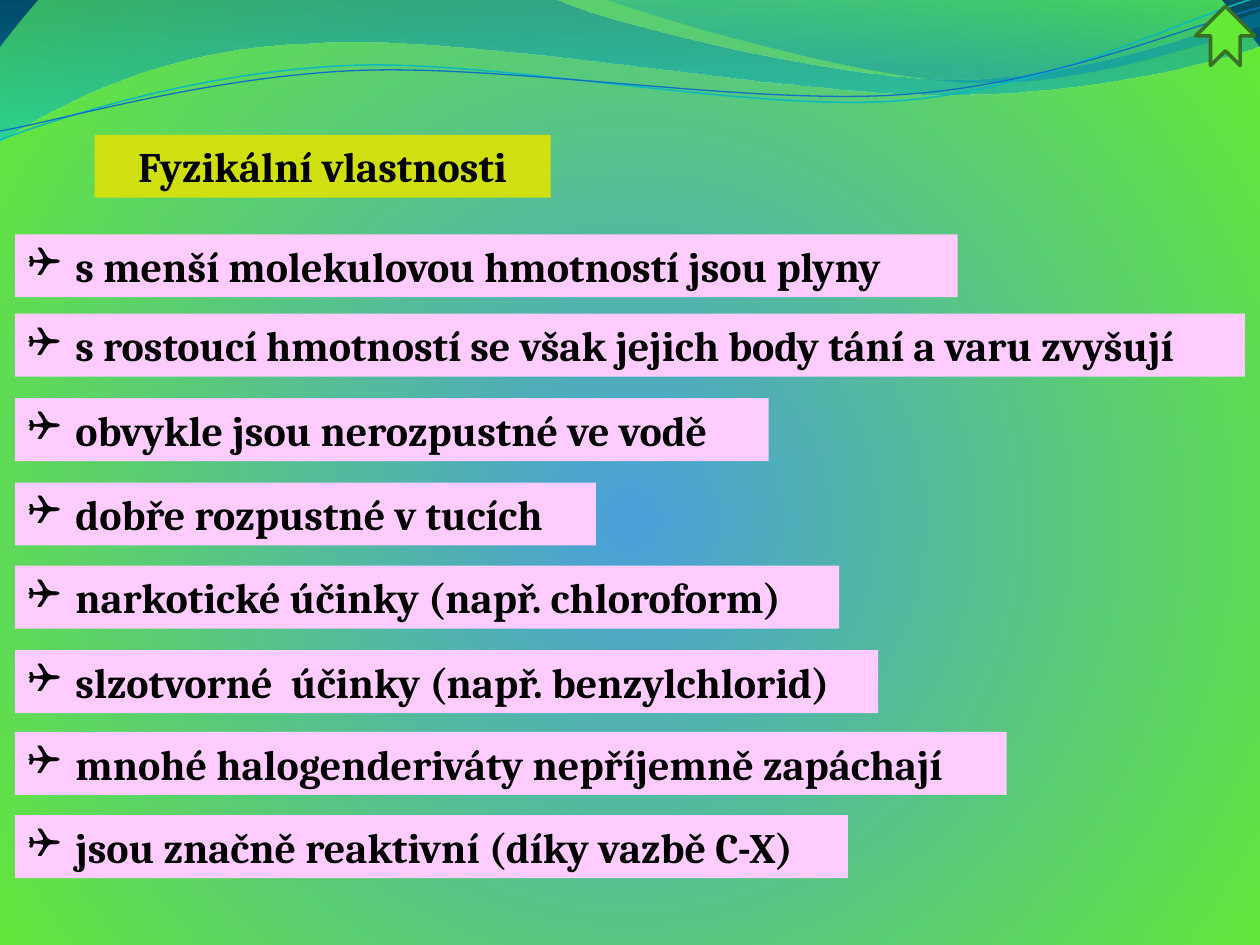
from math import cos, radians, sin

from lxml import etree
from pptx import Presentation
from pptx.dml.color import RGBColor
from pptx.enum.shapes import MSO_SHAPE
from pptx.enum.text import MSO_ANCHOR, MSO_AUTO_SIZE, PP_ALIGN
from pptx.oxml.ns import qn
from pptx.util import Inches, Pt

RECTANGLE = MSO_SHAPE.RECTANGLE
NOTCHED_ARROW = MSO_SHAPE.NOTCHED_RIGHT_ARROW
LEFT, CENTER = PP_ALIGN.LEFT, PP_ALIGN.CENTER
LINE_ROTATION = 357.3

TEXT_FORMAT = {"name": "Cambria", "size": Pt(24), "bold": True}
FRAME_FORMAT = {"word_wrap": True, "auto_size": MSO_AUTO_SIZE.SHAPE_TO_FIT_TEXT,
                "vertical_anchor": MSO_ANCHOR.TOP}

# Each statement: text, top, width
STATEMENTS = [
    ("s menší molekulovou hmotností jsou plyny", 1.86, 7.48),
    ("s rostoucí hmotností se však jejich body tání a varu zvyšují", 2.49, 9.76),
    ("obvykle jsou nerozpustné ve vodě", 3.16, 5.98),
    ("dobře rozpustné v tucích", 3.83, 4.61),
    ("narkotické účinky (např. chloroform)", 4.49, 6.54),
    ("slzotvorné  účinky (např. benzylchlorid)", 5.16, 6.85),
    ("mnohé halogenderiváty nepříjemně zapáchají", 5.81, 7.87),
    ("jsou značně reaktivní (díky vazbě C-X)", 6.47, 6.61),
]

# Outlines: one point is a straight step, three points are a Bézier curve
BROAD_WAVE = [[(0, 0)], [(4.4, -0.01)], [(4.76, 0.17), (6.64, 0.63), (7.58, 0.63)],
              [(8.53, 0.63), (9.58, 0.26), (10, 0.09)], [(10.01, 0.36)],
              [(9.83, 0.44), (8.7, 0.76), (7.46, 0.75)],
              [(6.22, 0.75), (3.82, 0.28), (2.57, 0.34)],
              [(1.29, 0.36), (0.46, 0.83), (-0.01, 1.13)]]
RIGHT_WAVE = [[(4.79, -0.01)], [(5.09, 0.11), (6.82, 0.62), (7.69, 0.65)],
              [(8.56, 0.69), (9.61, 0.32), (10, 0.21)], [(10, 0)]]
CYAN_LINE = [[(0, 1.11)], [(0.48, 0.93), (1.58, 0.57), (2.77, 0.52)],
             [(3.95, 0.47), (5.93, 0.89), (7.13, 0.8)],
             [(8.33, 0.71), (9.38, 0.15), (9.98, -0.02)]]
BLUE_LINE = [[(0, 1.04)], [(0.47, 0.96), (1.64, 0.61), (2.83, 0.56)],
             [(4.03, 0.51), (5.97, 0.84), (7.17, 0.75)],
             [(8.36, 0.67), (9.41, 0.21), (10, 0.06)]]


def color(hex_string):
    return RGBColor.from_string(hex_string)


def set_gradient(properties, stops, center=None):
    """Replace a solid fill by a downward or, with a center, a circular gradient."""
    gradient = etree.Element(qn("a:gradFill"), rotWithShape="1")
    stop_list = etree.SubElement(gradient, qn("a:gsLst"))
    for position, hex_string, opacity in stops:
        stop = etree.SubElement(stop_list, qn("a:gs"), pos=str(position * 1000))
        stop_color = etree.SubElement(stop, qn("a:srgbClr"), val=hex_string)
        if opacity < 100:
            etree.SubElement(stop_color, qn("a:alpha"), val=str(opacity * 1000))
    if center:
        x, y = center
        circle = etree.SubElement(gradient, qn("a:path"), path="circle")
        sides = {"l": x, "t": y, "r": 100 - x, "b": 100 - y}
        etree.SubElement(circle, qn("a:fillToRect"),
                         {side: str(value * 1000) for side, value in sides.items()})
    else:
        etree.SubElement(gradient, qn("a:lin"), ang="5400000", scaled="0")
    properties.replace(properties.find(qn("a:solidFill")), gradient)


def turn(outline, degrees, center):
    """Turn every point of an outline clockwise about a center."""
    cosine, sine = cos(radians(degrees)), sin(radians(degrees))
    center_x, center_y = center
    return [[(center_x + (x - center_x) * cosine - (y - center_y) * sine,
              center_y + (x - center_x) * sine + (y - center_y) * cosine)
             for x, y in step] for step in outline]


def add_outline(slide, outline, left, top, closed):
    """Build the outline from its anchors, then bend its curved segments."""
    steps = [[(Inches(left + x), Inches(top + y)) for x, y in step]
             for step in outline]
    builder = slide.shapes.build_freeform(*steps[0][0], scale=1.0)
    builder.add_line_segments([step[-1] for step in steps[1:]], close=closed)
    shape = builder.convert_to_shape()
    shape.shadow.inherit = False
    segments = list(shape.element.iter(qn("a:lnTo")))
    for segment, step in zip(segments, steps[1:]):
        if len(step) == 3:
            curve = etree.Element(qn("a:cubicBezTo"))
            for x, y in step:
                etree.SubElement(curve, qn("a:pt"), x=str(x - shape.left),
                                 y=str(y - shape.top))
            segment.getparent().replace(segment, curve)
    return shape


def add_background(slide):
    slide.background.fill.solid()
    properties = slide.element.find(".//" + qn("p:bgPr"))
    set_gradient(properties, [(0, "4A9FDA", 100), (100, "64E935", 100),
                              (100, "002A45", 100)], center=(50, 55))


def add_waves(slide, left, top):
    # Translucent waves
    for outline, stops in (
            (BROAD_WAVE, [(0, "0074A1", 45), (100, "00C6CF", 55)]),
            (RIGHT_WAVE, [(0, "00A1A9", 30), (80, "008BBF", 45)])):
        wave = add_outline(slide, outline, left, top, True)
        wave.line.fill.background()
        wave.fill.solid()
        set_gradient(wave.element.spPr, stops)
    # Thin lines, laid level and then rotated as shapes
    for outline, center, hex_string, width in (
            (CYAN_LINE, (4.99, 0.57), "0AB8BF", 0.85),
            (BLUE_LINE, (5, 0.59), "0F6FC6", 0.75)):
        level = turn(outline, -LINE_ROTATION, center)
        curve = add_outline(slide, level, left, top, False)
        curve.rotation = LINE_ROTATION
        curve.fill.background()
        curve.line.color.rgb = color(hex_string)
        curve.line.width = Pt(width)


def add_label(slide, text, left, top, width, height, fill, alignment):
    shape = slide.shapes.add_shape(RECTANGLE, Inches(left), Inches(top),
                                   Inches(width), Inches(height))
    shape.shadow.inherit = False
    shape.fill.solid()
    shape.fill.fore_color.rgb = color(fill)
    shape.line.fill.background()
    for attribute, value in FRAME_FORMAT.items():
        setattr(shape.text_frame, attribute, value)
    paragraph = shape.text_frame.paragraphs[0]
    paragraph.alignment = alignment
    run = paragraph.add_run()
    run.text = text
    for attribute, value in TEXT_FORMAT.items():
        setattr(run.font, attribute, value)
    run.font.color.rgb = color("000000")
    return paragraph


def add_statements(slide, left, height):
    for text, top, width in STATEMENTS:
        paragraph = add_label(slide, text, left, top, width, height, "FFCCFF", LEFT)
        properties = paragraph._p.get_or_add_pPr()
        properties.set("marL", str(Inches(0.38)))
        properties.set("indent", str(Inches(-0.38)))
        etree.SubElement(properties, qn("a:buFont"), typeface="Wingdings")
        etree.SubElement(properties, qn("a:buChar"), char="❑")


def add_up_arrow(slide, left, top, size):
    arrow = slide.shapes.add_shape(NOTCHED_ARROW, Inches(left), Inches(top),
                                   Inches(size), Inches(size))
    arrow.rotation = 270
    arrow.shadow.inherit = False
    arrow.fill.solid()
    arrow.fill.fore_color.rgb = color("64E935")
    arrow.line.color.rgb = color("387026")
    arrow.line.width = Pt(2)


def main():
    presentation = Presentation()
    presentation.slide_width = Inches(10)
    presentation.slide_height = Inches(7.5)
    slide = presentation.slides.add_slide(presentation.slide_layouts[6])
    add_background(slide)
    add_waves(slide, 0, 0)
    add_label(slide, "Fyzikální vlastnosti", 0.75, 1.07, 3.62, 0.5, "D0DF0F", CENTER)
    add_statements(slide, 0.12, 0.5)
    add_up_arrow(slide, 9.49, 0.05, 0.47)
    presentation.save("out.pptx")


if __name__ == "__main__":
    main()
